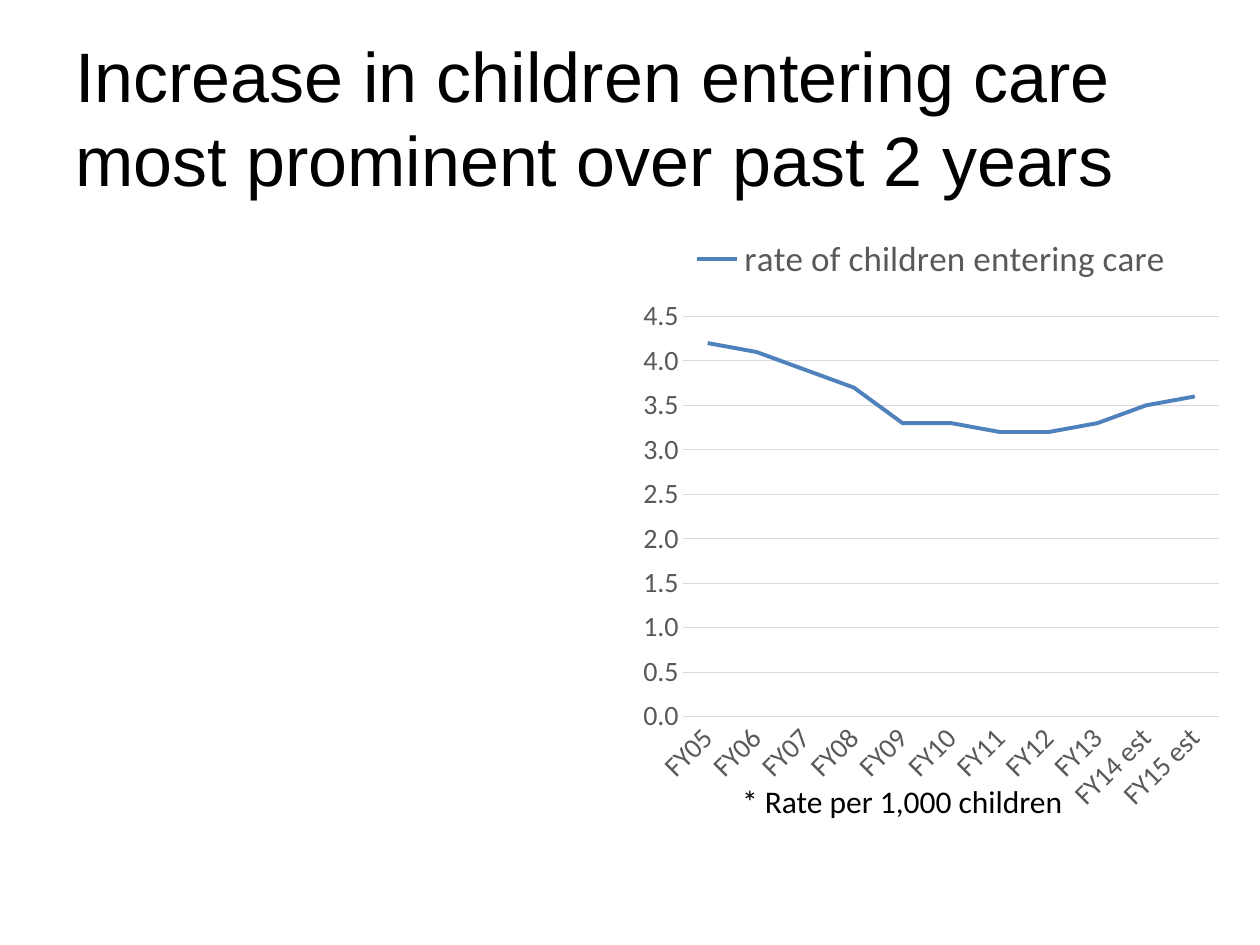
from pptx import Presentation
from pptx.chart.data import CategoryChartData
from pptx.dml.color import RGBColor
from pptx.enum import chart as c, text as t
from pptx.util import Cm, Pt

RATES = {
    "FY05": 4.2, "FY06": 4.1, "FY07": 3.9, "FY08": 3.7, "FY09": 3.3, "FY10": 3.3,
    "FY11": 3.2, "FY12": 3.2, "FY13": 3.3, "FY14 est": 3.5, "FY15 est": 3.6,
}
BLACK, GREY, LIGHT_GREY, BLUE = "000000", "595959", "D9D9D9", "4F81BD"


def color(value):
    """Return the colour for a hex string."""
    return RGBColor.from_string(value)


def style_font(font, name, size, value):
    """Set the face, size and colour of a font."""
    font.name = name
    font.size = Pt(size)
    font.color.rgb = color(value)


def style_line(line, value, width):
    """Set the colour and width of a line."""
    line.color.rgb = color(value)
    line.width = Pt(width)


def add_text(slide, box, content, font_name, size, anchor=t.MSO_ANCHOR.TOP):
    """Add a wrapping text box and return its paragraph."""
    frame = slide.shapes.add_textbox(*map(Cm, box)).text_frame
    frame.word_wrap = True
    frame.vertical_anchor = anchor
    frame.text = content
    paragraph = frame.paragraphs[0]
    style_font(paragraph.runs[0].font, font_name, size, BLACK)
    return paragraph


def style_axis(axis):
    """Give an axis grey labels and no tick marks."""
    axis.major_tick_mark = c.XL_TICK_MARK.NONE
    axis.minor_tick_mark = c.XL_TICK_MARK.NONE
    style_font(axis.tick_labels.font, "Calibri", 16, GREY)


def add_rate_chart(slide, box):
    """Add the line chart of entry rates by fiscal year."""
    data = CategoryChartData(number_format="#,##0.0")
    data.categories = list(RATES)
    data.add_series("rate of children entering care", list(RATES.values()))
    chart = slide.shapes.add_chart(c.XL_CHART_TYPE.LINE, *map(Cm, box), data).chart
    style_font(chart.font, "Calibri", 10, BLACK)
    chart.has_title = False
    chart.has_legend = True
    chart.legend.position = c.XL_LEGEND_POSITION.TOP
    chart.legend.include_in_layout = False
    style_font(chart.legend.font, "Calibri", 20, GREY)

    style_axis(chart.category_axis)
    style_line(chart.category_axis.format.line, LIGHT_GREY, 0.75)
    values = chart.value_axis
    style_axis(values)
    values.minimum_scale, values.maximum_scale, values.major_unit = 0, 4.5, 0.5
    values.tick_labels.number_format = "#,##0.0"
    values.tick_labels.number_format_is_linked = False
    values.format.line.fill.background()
    style_line(values.major_gridlines.format.line, LIGHT_GREY, 0.75)

    plot = chart.plots[0]
    plot.vary_by_categories = False
    series = plot.series[0]
    series.smooth = False
    series.marker.style = c.XL_MARKER_STYLE.NONE
    style_line(series.format.line, BLUE, 2.25)


def main():
    """Build the slide and save it."""
    presentation = Presentation()
    presentation.slide_width, presentation.slide_height = Cm(25.4), Cm(19.05)
    slide = presentation.slides.add_slide(presentation.slide_layouts[6])
    title = add_text(
        slide, (1.27, 0.76, 22.86, 3.18),
        "Increase in children entering care most prominent over past 2 years",
        "Arial", 40, t.MSO_ANCHOR.MIDDLE,
    )
    title.line_spacing = Pt(48)
    add_rate_chart(slide, (12.73, 4.45, 12.09, 12.17))
    add_text(slide, (14.71, 15.65, 10.06, 1.02), "* Rate per 1,000 children", "Calibri", 18)
    presentation.save("out.pptx")


if __name__ == "__main__":
    main()
